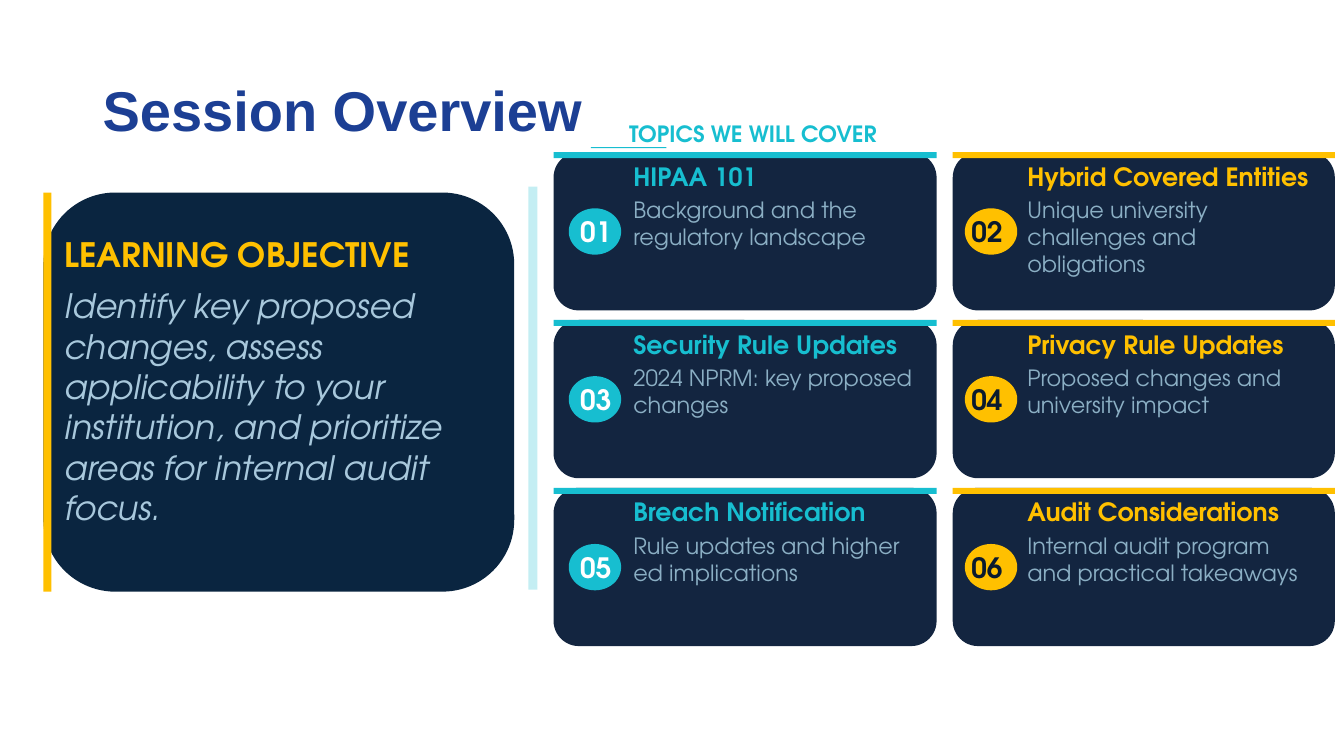
import lxml.etree
import pptx
import pptx.dml.color
import pptx.enum.shapes
import pptx.enum.text
import pptx.oxml.ns
import pptx.util

SHAPE = pptx.enum.shapes.MSO_SHAPE
ALIGN = pptx.enum.text.PP_ALIGN
ANCHOR = pptx.enum.text.MSO_ANCHOR
WIDTH, HEIGHT = pptx.util.Inches(13.33), pptx.util.Inches(7.5)
BODY_FONT = "TeX Gyre Adventor"
COLORS = {
    "title": "1C3F94", "teal": "17BED0", "gold": "FFC000", "card": "132540",
    "panel": "0A2540", "white": "FFFFFF", "ink": "0A1A2E",
    "summary": "8BAFC4", "objective": "A8C8DC",
}

# All lengths are percentages of the slide's width or height.
CARD_TOP, ROW_STEP, CARD_HEIGHT = 20.13, 22.2, 20.93
COLUMNS = [
    {"left": 41.19, "width": 28.5, "accent": "teal", "number": "white",
     "badge_dx": 1.13, "number_dx": 1.2, "text_dx": 5.93},
    {"left": 70.89, "width": 28.43, "accent": "gold", "number": "ink",
     "badge_dx": 0.9, "number_dx": 0.6, "text_dx": 5.55},
]
TOPICS = [
    ("HIPAA 101", "Background and the regulatory landscape"),
    ("Hybrid Covered Entities", "Unique university challenges and obligations"),
    ("Security Rule Updates", "2024 NPRM: key proposed changes"),
    ("Privacy Rule Updates", "Proposed changes and university impact"),
    ("Breach Notification", "Rule updates and higher ed implications"),
    ("Audit Considerations", "Internal audit program and practical takeaways"),
]


def rgb(name):
    return pptx.dml.color.RGBColor.from_string(COLORS[name])


def place(left, top, width, height):
    """Turn percentages of the slide into lengths."""
    return [round(share * side / 100) for share, side in
            ((left, WIDTH), (top, HEIGHT), (width, WIDTH), (height, HEIGHT))]


def add_block(page, kind, area, color, corner=None, opacity=None):
    block = page.shapes.add_shape(kind, *place(*area))
    block.shadow.inherit = False
    block.fill.solid()
    block.fill.fore_color.rgb = rgb(color)
    block.line.fill.background()
    if corner is not None:
        block.adjustments[0] = corner
    if opacity is not None:
        tag = pptx.oxml.ns.qn
        tint = block.fill._xPr.find(".//" + tag("a:srgbClr"))
        lxml.etree.SubElement(tint, tag("a:alpha"), val=str(opacity * 1000))


def add_text(page, area, words, size, color, bold=False, italic=False,
             font=BODY_FONT, centred=False, inset=True):
    """Add a text box; without inset its text starts at the very edge."""
    box = page.shapes.add_textbox(*place(*area))
    frame = box.text_frame
    frame.word_wrap = True
    if not inset:
        frame.margin_left = frame.margin_right = 0
        frame.margin_top = frame.margin_bottom = 0
    para = frame.paragraphs[0]
    para.text = words
    para.font.name = font
    para.font.size = pptx.util.Pt(size)
    para.font.bold = bold
    para.font.italic = italic
    para.font.color.rgb = rgb(color)
    if centred:
        para.alignment = ALIGN.CENTER
        frame.vertical_anchor = ANCHOR.MIDDLE
    return box


def add_title(page):
    box = add_text(page, (6.9, 5.33, 86.27, 19.33), "Session Overview", 40,
                   "title", bold=True, font="Arial")
    box.text_frame.vertical_anchor = ANCHOR.MIDDLE
    box.text_frame.paragraphs[0].line_spacing = 0.9


def add_topics_heading(page):
    add_block(page, SHAPE.RECTANGLE, (39.31, 24.67, 0.68, 53.33), "teal", opacity=25)
    add_text(page, (46.81, 15.87, 52.51, 3.33), "TOPICS WE WILL COVER", 16,
             "teal", bold=True, inset=False)
    add_block(page, SHAPE.RECTANGLE, (43.96, 19.47, 5.63, 0.13), "teal")


def add_topic_card(page, index, heading, summary):
    row, column = divmod(index, len(COLUMNS))
    style = COLUMNS[column]
    left, width, accent = style["left"], style["width"], style["accent"]
    top = CARD_TOP + row * ROW_STEP
    badge_top, badge_size = top + 7.43, (3.9, 6.13)
    text_left = left + style["text_dx"]
    add_block(page, SHAPE.ROUNDED_RECTANGLE, (left, top, width, CARD_HEIGHT),
              "card", corner=0.16)
    add_block(page, SHAPE.RECTANGLE, (left, top, width, 0.8), accent)
    add_block(page, SHAPE.OVAL, (left + style["badge_dx"], badge_top, *badge_size), accent)
    add_text(page, (left + style["number_dx"], badge_top, *badge_size),
             f"{index + 1:02}", 20, style["number"], bold=True, centred=True, inset=False)
    add_text(page, (text_left, top + 1.17, 21.75, 4.27), heading, 18, accent,
             bold=True, inset=False)
    add_text(page, (text_left, top + 5.85, 21.75, 13.87), summary, 16, "summary",
             inset=False)


def add_objective(page):
    left, top, height = 3.23, 25.47, 52.8
    add_block(page, SHAPE.ROUNDED_RECTANGLE, (left, top, 35.03, height), "panel",
              corner=0.18)
    add_block(page, SHAPE.RECTANGLE, (left, top, 0.6, height), "gold")
    add_text(page, (4.8, 30.93, 39.83, 18.8), "LEARNING OBJECTIVE", 24, "gold",
             bold=True, inset=False)
    add_text(page, (4.8, 37.73, 30.76, 33.07),
             "Identify key proposed changes, assess applicability to your "
             "institution, and prioritize areas for internal audit focus.",
             24, "objective", italic=True, inset=False)


def main():
    deck = pptx.Presentation()
    deck.slide_width, deck.slide_height = WIDTH, HEIGHT
    page = deck.slides.add_slide(deck.slide_layouts[6])
    add_title(page)
    add_topics_heading(page)
    for index, (heading, summary) in enumerate(TOPICS):
        add_topic_card(page, index, heading, summary)
    add_objective(page)
    deck.save("out.pptx")


if __name__ == "__main__":
    main()
